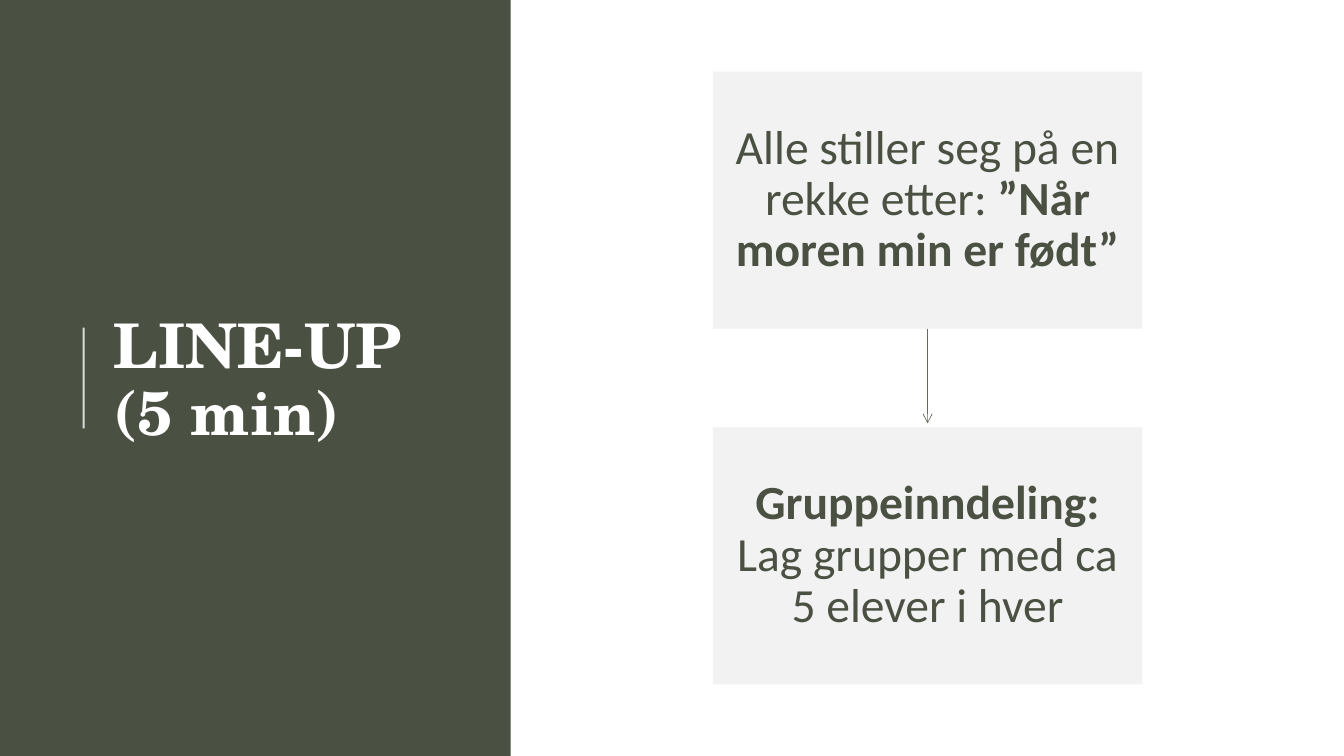
"""Build the line-up activity slide with a title panel and two linked steps."""
from lxml.etree import SubElement
from pptx import Presentation
from pptx.dml.color import RGBColor
from pptx.enum.shapes import MSO_CONNECTOR, MSO_SHAPE
from pptx.enum.text import MSO_ANCHOR, MSO_AUTO_SIZE, PP_ALIGN
from pptx.oxml.ns import qn
from pptx.util import Inches, Pt

TITLE = "LINE-UP\v(5 min)"
STEPS = [
    [("Alle stiller seg på en rekke etter: ", False), ("”Når moren min er født”", True)],
    [("Gruppeinndeling:", True), (" Lag grupper med ca 5 elever i hver", False)],
]
GREEN, ARROW, GREY, WHITE = "4A5142", "626C57", "F2F2F2", "FFFFFF"
WIDTH, HEIGHT = 13.33, 7.5
PANEL_W = 0.38 * WIDTH
BOX_X, BOX_Y, BOX_W, BOX_H, PITCH = 7.07, 0.71, 4.26, 2.55, 3.53
ARROW_LEN = 0.94


def color(hex_code):
    return RGBColor.from_string(hex_code)


def add_box(slide, x, y, w, h, fill):
    sp = slide.shapes.add_shape(MSO_SHAPE.RECTANGLE, *map(Inches, (x, y, w, h)))
    sp.shadow.inherit = False
    sp.fill.solid()
    sp.fill.fore_color.rgb = color(fill)
    sp.line.fill.background()
    return sp


def style(p, name, size, fill):
    p.line_spacing = 0.9
    p.font.name, p.font.size = name, Pt(size)
    p.font.color.rgb = color(fill)


def add_step(slide, y, runs):
    sp = add_box(slide, BOX_X, y, BOX_W, BOX_H, GREY)
    tf = sp.text_frame
    tf.word_wrap = True
    tf.vertical_anchor = MSO_ANCHOR.MIDDLE
    tf.margin_left = tf.margin_right = Inches(0.21)
    tf.margin_top = tf.margin_bottom = Inches(0.22)
    p = tf.paragraphs[0]
    p.alignment = PP_ALIGN.CENTER
    style(p, "Calibri", 34, GREEN)
    for text, bold in runs:
        r = p.add_run()
        r.text, r.font.bold = text, bold
    return sp


def add_line(slide, x, y1, y2, fill, width):
    ln = slide.shapes.add_connector(MSO_CONNECTOR.STRAIGHT, *map(Inches, (x, y1, x, y2)))
    ln.line.color.rgb = color(fill)
    ln.line.width = Pt(width)
    SubElement(ln._element.spPr, qn("a:effectLst"))
    return ln


def main():
    prs = Presentation()
    prs.slide_width, prs.slide_height = Inches(WIDTH), Inches(HEIGHT)
    slide = prs.slides.add_slide(prs.slide_layouts[5])

    panel = add_box(slide, 0, 0, PANEL_W, HEIGHT, GREEN)
    slide.shapes._spTree.insert(2, panel._element)
    rule = add_line(slide, 0.83, 4.25, 3.25, WHITE, 1.5)
    fill = rule._element.spPr.find(".//" + qn("a:srgbClr"))
    SubElement(fill, qn("a:alpha"), val="80000")

    title = slide.shapes.title
    title.left, title.top, title.width, title.height = map(Inches, (1.03, 0.78, 3.69, 6.02))
    tf = title.text_frame
    tf.text = TITLE
    tf.word_wrap = True
    tf.auto_size = MSO_AUTO_SIZE.NONE
    tf.vertical_anchor = MSO_ANCHOR.MIDDLE
    p = tf.paragraphs[0]
    p.alignment = PP_ALIGN.LEFT
    style(p, "TeX Gyre Schola", 44, WHITE)
    p.font.bold = True

    boxes = [add_step(slide, BOX_Y + i * PITCH, runs) for i, runs in enumerate(STEPS)]
    start = BOX_Y + BOX_H
    arrow = add_line(slide, BOX_X + BOX_W / 2, start, start + ARROW_LEN, ARROW, 0.5)
    arrow.begin_connect(boxes[0], 2)
    SubElement(arrow.line._get_or_add_ln(), qn("a:tailEnd"), type="arrow")

    prs.save("out.pptx")


if __name__ == "__main__":
    main()
